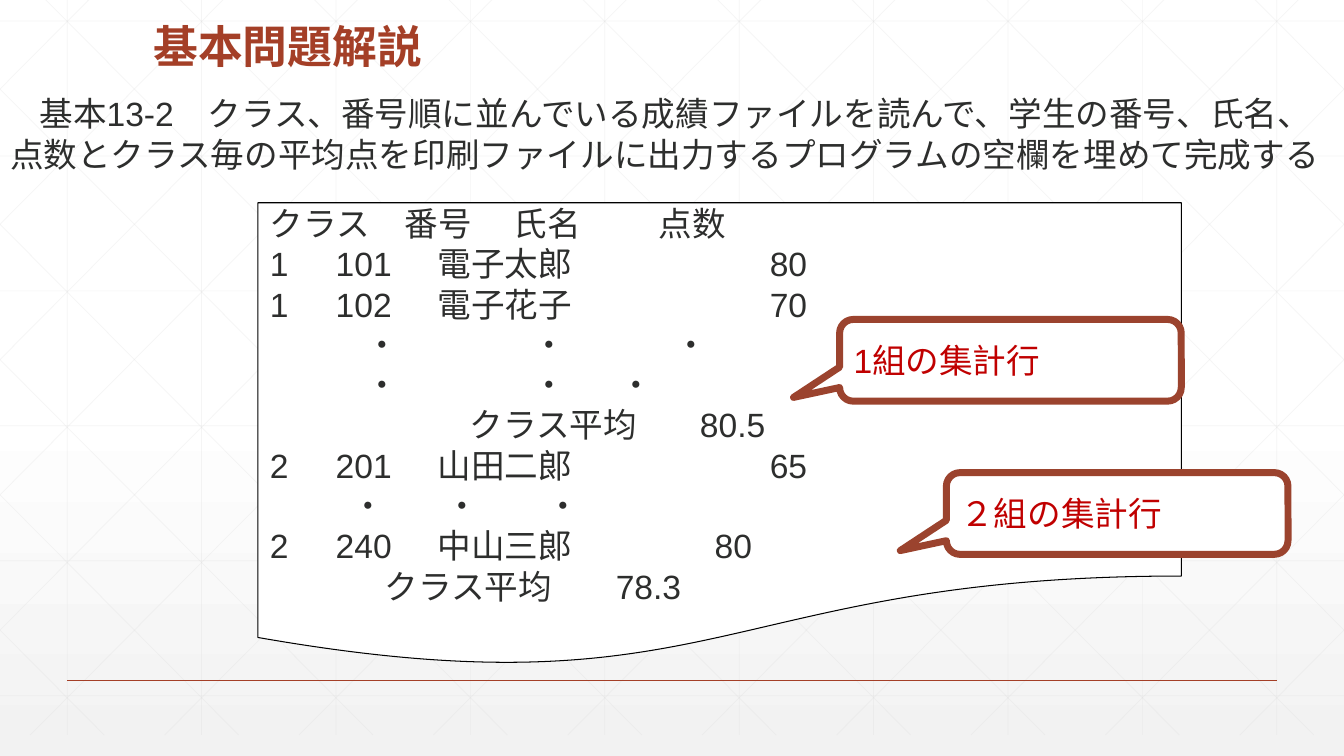
"""Build the slide that explains basic exercise 13-2."""
import pptx
import pptx.dml.color
import pptx.enum.shapes
import pptx.enum.text
import pptx.oxml
import pptx.oxml.ns
import pptx.util
from lxml import etree

Cm, Pt = pptx.util.Cm, pptx.util.Pt
RGBColor = pptx.dml.color.RGBColor
KIND = pptx.enum.shapes.MSO_SHAPE
JOIN = pptx.enum.shapes.MSO_CONNECTOR.STRAIGHT
LEFT = pptx.enum.text.PP_ALIGN.LEFT
ANCHOR = pptx.enum.text.MSO_ANCHOR
NONE = pptx.enum.text.MSO_AUTO_SIZE.NONE

RED = RGBColor(0xA4, 0x3F, 0x27)
BRICK = RGBColor(0x9B, 0x43, 0x2E)
CRIMSON = RGBColor(0xC0, 0x00, 0x00)
INK = RGBColor(0x2D, 0x2E, 0x2D)
GRID = RGBColor(0xD9, 0xD9, 0xD9)
PALE = RGBColor(0xF2, 0xF2, 0xF2)
WHITE = RGBColor(0xFF, 0xFF, 0xFF)
BLACK = RGBColor(0x00, 0x00, 0x00)

TITLE = "基本問題解説"
TASK = ("基本13-2　クラス、番号順に並んでいる成績ファイルを読んで、学生の番号、氏名、"
        "点数とクラス毎の平均点を印刷ファイルに出力するプログラムの空欄を埋めて完成する")
HEAD = (0, 3.4, 6.15, 9.8)
ROW = (0, 1.66, 4.23, 12.6)
REPORT = [
    (HEAD, ("クラス", "番号", "氏名", "点数")),
    (ROW, ("1", "101", "電子太郎", "80")),
    (ROW, ("1", "102", "電子花子", "70")),
    ((2.4, 6.63, 10.2), "・・・"),
    ((2.4, 6.63, 8.82), "・・・"),
    ((5.04, 10.84), ("クラス平均", "80.5")),
    (ROW, ("2", "201", "山田二郎", "65")),
    ((2.07, 4.43, 6.98), "・・・"),
    ((0, 1.66, 4.23, 11.21), ("2", "240", "中山三郎", "80")),
    ((2.9, 8.72), ("クラス平均", "78.3")),
]
NOTES = [("1組の集計行", 21.16, 8.05), ("２組の集計行", 23.85, 11.91)]

WIDE, HIGH = 33.87, 19.05
STEP = WIDE / 10
TOP, RUN = -0.53, 18.93
BODY = {"name": "Arial", "size": Pt(24), "bold": False}
TIGHT = {"line_spacing": Pt(28.8), "space_before": Pt(0), "alignment": LEFT}


def put(item, form):
    """Set every attribute named in a dict."""
    for name, value in form.items():
        setattr(item, name, value)


def node(home, tag, **attrs):
    """Append one drawing element."""
    return etree.SubElement(home, pptx.oxml.ns.qn(tag), attrs)


def write(para, text, color, font, form):
    """Write one formatted run into a paragraph."""
    run = para.add_run()
    run.text = text
    put(run.font, font)
    run.font.color.rgb = color
    node(run.font._element, "a:ea", typeface="Noto Sans CJK JP")
    put(para, form)


def place(shape, left, top, wide, high):
    """Move and size a shape in centimetres."""
    put(shape, {"left": Cm(left), "top": Cm(top),
                "width": Cm(wide), "height": Cm(high)})


def rule(slide, ends, color, thick, alpha=None):
    """Draw a straight line."""
    line = slide.shapes.add_connector(JOIN, *map(Cm, ends))
    line.line.color.rgb = color
    line.line.width = Pt(thick)
    props = line.element.spPr
    if alpha:
        tint = next(props.iter(pptx.oxml.ns.qn("a:srgbClr")))
        node(tint, "a:alpha", val=str(alpha * 1000))
    node(props, "a:effectLst")


def mesh():
    """Return the ends of all grid lines."""
    ends = [(STEP * (k + 0.5), TOP, STEP * (k + 0.5), TOP + HIGH)
            for k in range(10)]
    ends += [(0, 0.53 + 3.4 * k, WIDE, 0.53 + 3.4 * k) for k in range(6)]
    for k in range(-5, 10):
        base = 0.63 + STEP * k
        near, far = max(0, base), min(WIDE, base + RUN)
        high, low = (TOP + (x - base) * HIGH / RUN for x in (near, far))
        ends += [(near, high, far, low), (WIDE - near, high, WIDE - far, low)]
    return ends


def panel(slide, kind, spot, color, thick):
    """Add a white outlined shape."""
    shape = slide.shapes.add_shape(kind, *map(Cm, spot))
    shape.shadow.inherit = False
    shape.fill.solid()
    shape.fill.fore_color.rgb = WHITE
    shape.line.color.rgb = color
    shape.line.width = Pt(thick)
    return shape


def report(slide):
    """Add the printed report with its tab stops."""
    sheet = panel(slide, KIND.FLOWCHART_DOCUMENT,
                  (6.5, 5.11, 23.27, 11.73), BLACK, 0.75)
    frame = sheet.text_frame
    put(frame, {"margin_left": Cm(0.3), "margin_right": 0, "margin_top": 0,
                "margin_bottom": 0, "vertical_anchor": ANCHOR.TOP})
    for num, (stops, cells) in enumerate(REPORT):
        para = frame.add_paragraph() if num else frame.paragraphs[0]
        lead = "\t" if stops[0] else ""
        write(para, lead + "\t".join(cells), INK, BODY, TIGHT)
        tabs = node(para._p.get_or_add_pPr(), "a:tabLst")
        for stop in filter(None, stops):
            node(tabs, "a:tab", pos=str(Cm(stop)), algn="l")


def main():
    """Build and save the slide."""
    deck = pptx.Presentation()
    put(deck, {"slide_width": Cm(WIDE), "slide_height": Cm(HIGH)})
    slide = deck.slides.add_slide(deck.slide_layouts[1])
    fill = slide.background.fill
    fill.gradient()
    fill.gradient_angle = 270
    for stop, color, spot in zip(fill.gradient_stops, (WHITE, PALE), (0.53, 1)):
        stop.color.rgb = color
        stop.position = spot

    for ends in mesh():
        rule(slide, ends, GRID, 0.5, 25)
    rule(slide, (1.69, 17.15, 32.17, 17.15), RED, 1)

    title, task = slide.placeholders
    for shape in (title, task):
        shape.element.getparent().append(shape.element)
    place(title, 3.61, -1.22, 26.67, 3.18)
    put(title.text_frame, {"vertical_anchor": ANCHOR.BOTTOM, "auto_size": NONE})
    write(title.text_frame.paragraphs[0], TITLE, RED,
          {"name": "Noto Sans CJK JP", "size": Pt(32), "bold": True},
          {"line_spacing": 0.9, "alignment": LEFT})

    report(slide)

    place(task, 0, 1.12, WIDE, 4.11)
    put(task.text_frame, {"vertical_anchor": ANCHOR.TOP, "auto_size": NONE,
                          "margin_top": Cm(1.23)})
    para = task.text_frame.paragraphs[0]
    write(para, TASK, INK, BODY, TIGHT)
    props = para._p.get_or_add_pPr()
    props.set("marL", "0")
    props.set("indent", str(Cm(0.74)))
    node(props, "a:buNone")

    for text, left, top in NOTES:
        note = panel(slide, KIND.ROUNDED_RECTANGULAR_CALLOUT,
                     (left, top, 8.61, 2.06), BRICK, 5)
        for num, value in enumerate((-0.635, 0.454, 0.167)):
            note.adjustments[num] = value
        note.text_frame.vertical_anchor = ANCHOR.MIDDLE
        write(note.text_frame.paragraphs[0], text, CRIMSON, BODY, TIGHT)

    deck.save("out.pptx")


if __name__ == "__main__":
    main()
